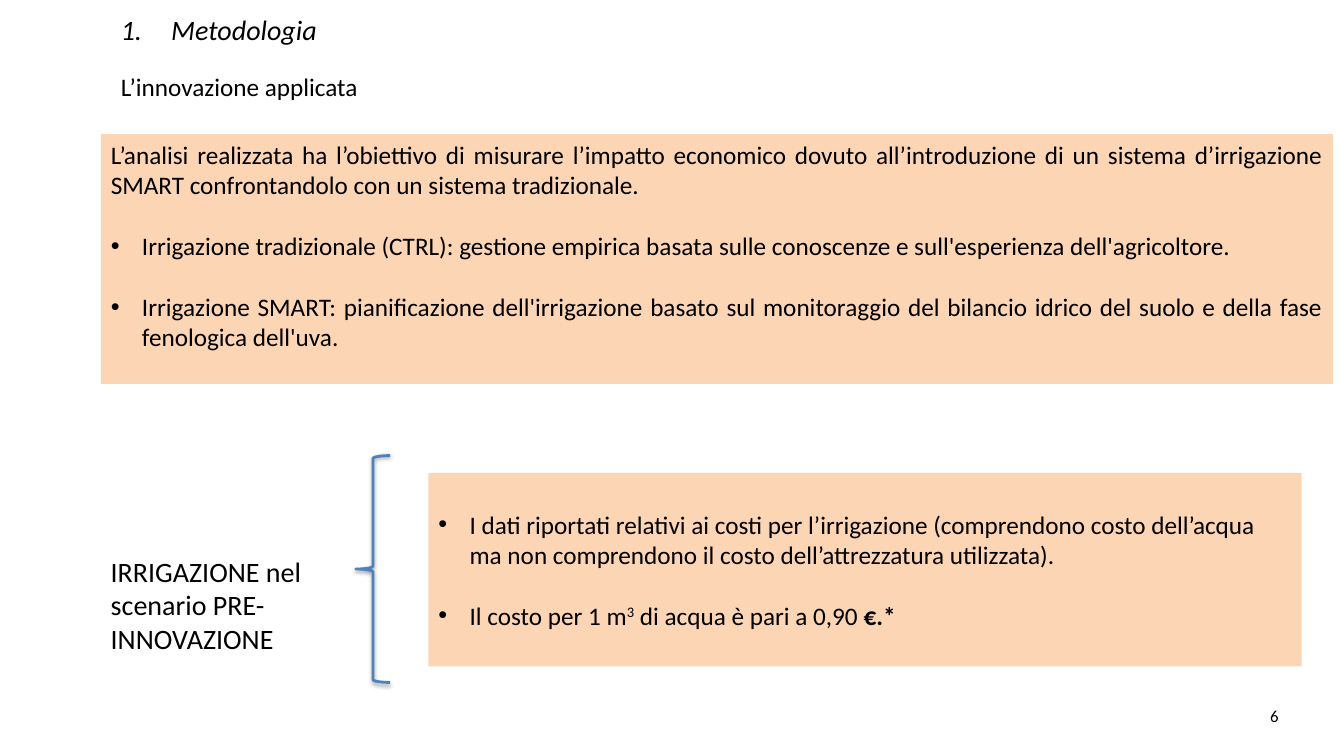
from lxml.etree import SubElement
from pptx import Presentation
from pptx.dml.color import RGBColor
from pptx.enum.shapes import MSO_SHAPE as Shape
from pptx.enum.text import MSO_ANCHOR as Anchor, PP_ALIGN as Align
from pptx.oxml.ns import qn
from pptx.util import Pt

EMU_PER_PX = 9144  # 100 px to the inch
FONT = "Calibri"
COLORS = {"text": "000000", "panel": "FCD5B5", "brace": "4F81BD", "shadow": "000000"}
BLANK_LINE = 22  # points, one line of 18 pt text
INDENT = 31

INTRO = ("L’analisi realizzata ha l’obiettivo di misurare l’impatto economico dovuto "
         "all’introduzione di un sistema d’irrigazione SMART confrontandolo con un "
         "sistema tradizionale.")
SYSTEMS = [
    "Irrigazione tradizionale (CTRL): gestione empirica basata sulle conoscenze e "
    "sull'esperienza dell'agricoltore.",
    "Irrigazione SMART: pianificazione dell'irrigazione basato sul monitoraggio del "
    "bilancio idrico del suolo e della fase fenologica dell'uva.",
]
COST_DATA = ("I dati riportati relativi ai costi per l’irrigazione (comprendono costo "
             "dell’acqua ma non comprendono il costo dell’attrezzatura utilizzata).")


def px(length):
    return length * EMU_PER_PX


def color(name):
    return RGBColor.from_string(COLORS[name])


def add_text_box(slide, *box):
    frame = slide.shapes.add_textbox(*map(px, box)).text_frame
    frame.word_wrap = True
    return frame


def add_panel(slide, box, anchor):
    panel = slide.shapes.add_shape(Shape.RECTANGLE, *map(px, box))
    panel.shadow.inherit = False
    panel.fill.solid()
    panel.fill.fore_color.rgb = color("panel")
    panel.line.fill.background()
    panel.text_frame.word_wrap = True
    panel.text_frame.vertical_anchor = anchor
    return panel.text_frame


def add_brace(slide, *box):
    brace = slide.shapes.add_shape(Shape.LEFT_BRACE, *map(px, box))
    brace.shadow.inherit = False
    brace.fill.background()
    brace.line.color.rgb = color("brace")
    brace.line.width = Pt(2)
    # Soft shadow below the line
    effects = brace._element.spPr.find(qn("a:effectLst"))
    shadow = SubElement(effects, qn("a:outerShdw"), blurRad="40000", dist="20000",
                        dir="5400000", rotWithShape="0")
    tint = SubElement(shadow, qn("a:srgbClr"), val=COLORS["shadow"])
    SubElement(tint, qn("a:alpha"), val="38000")


def set_marker(paragraph, indent, tag, **attributes):
    props = paragraph._p.get_or_add_pPr()
    props.set("marL", str(px(indent)))
    props.set("indent", str(-px(indent)))
    SubElement(props, qn("a:buFont"), typeface="Arial" if tag == "a:buChar" else FONT)
    SubElement(props, qn(tag), **attributes)


def set_bullet(paragraph):
    set_marker(paragraph, INDENT, "a:buChar", char="•")


def style_runs(paragraph, size=18, italic=None, align=Align.LEFT, before=None):
    paragraph.alignment = align
    if before:
        paragraph.space_before = Pt(before)
    for run in paragraph.runs:
        run.font.name = FONT
        run.font.size = Pt(size)
        run.font.italic = italic
        run.font.color.rgb = color("text")


def add_heading(slide):
    frame = add_text_box(slide, 110, 11, 654, 44)
    title = frame.paragraphs[0]
    title.text = "Metodologia"
    set_marker(title, 50, "a:buAutoNum", type="arabicPeriod")
    style_runs(title, size=20, italic=True)
    subtitle = frame.add_paragraph()
    subtitle.text = "L’innovazione applicata"
    style_runs(subtitle, before=20)
    for paragraph in (title, subtitle):
        paragraph.line_spacing = 0.9


def add_aim(slide):
    frame = add_panel(slide, (100, 133, 1222, 248), Anchor.TOP)
    intro = frame.paragraphs[0]
    intro.text = INTRO
    style_runs(intro, align=Align.JUSTIFY)
    for system in SYSTEMS:
        item = frame.add_paragraph()
        item.text = system
        set_bullet(item)
        style_runs(item, align=Align.JUSTIFY, before=BLANK_LINE)


def add_costs(slide):
    frame = add_panel(slide, (425, 469, 866, 192), Anchor.MIDDLE)
    data = frame.paragraphs[0]
    data.text = COST_DATA
    set_bullet(data)
    style_runs(data)

    # Unit price, with a raised exponent and a bold currency
    price = frame.add_paragraph()
    price.text = "Il costo per 1 m"
    exponent, amount, currency = (price.add_run() for _ in range(3))
    exponent.text = "3"
    exponent._r.get_or_add_rPr().set("baseline", "30000")
    amount.text = " di acqua è pari a 0,90 "
    currency.text = "€.*"
    currency.font.bold = True
    set_bullet(price)
    style_runs(price, before=BLANK_LINE)


def add_label(slide, box, text, size):
    label = add_text_box(slide, *box).paragraphs[0]
    label.text = text
    style_runs(label, size=size)


def main():
    deck = Presentation()
    deck.slide_width, deck.slide_height = px(1333), px(750)
    slide = deck.slides.add_slide(deck.slide_layouts[6])

    # Heading and aim of the analysis
    add_heading(slide)
    add_aim(slide)

    # Scenario before the innovation
    add_label(slide, (100, 545, 233, 111), "IRRIGAZIONE nel scenario PRE-INNOVAZIONE", 20)
    add_brace(slide, 353, 452, 34, 225)
    add_costs(slide)

    # Page number
    add_label(slide, (1250, 695, 75, 40), "6", 12)

    deck.save("out.pptx")


if __name__ == "__main__":
    main()
